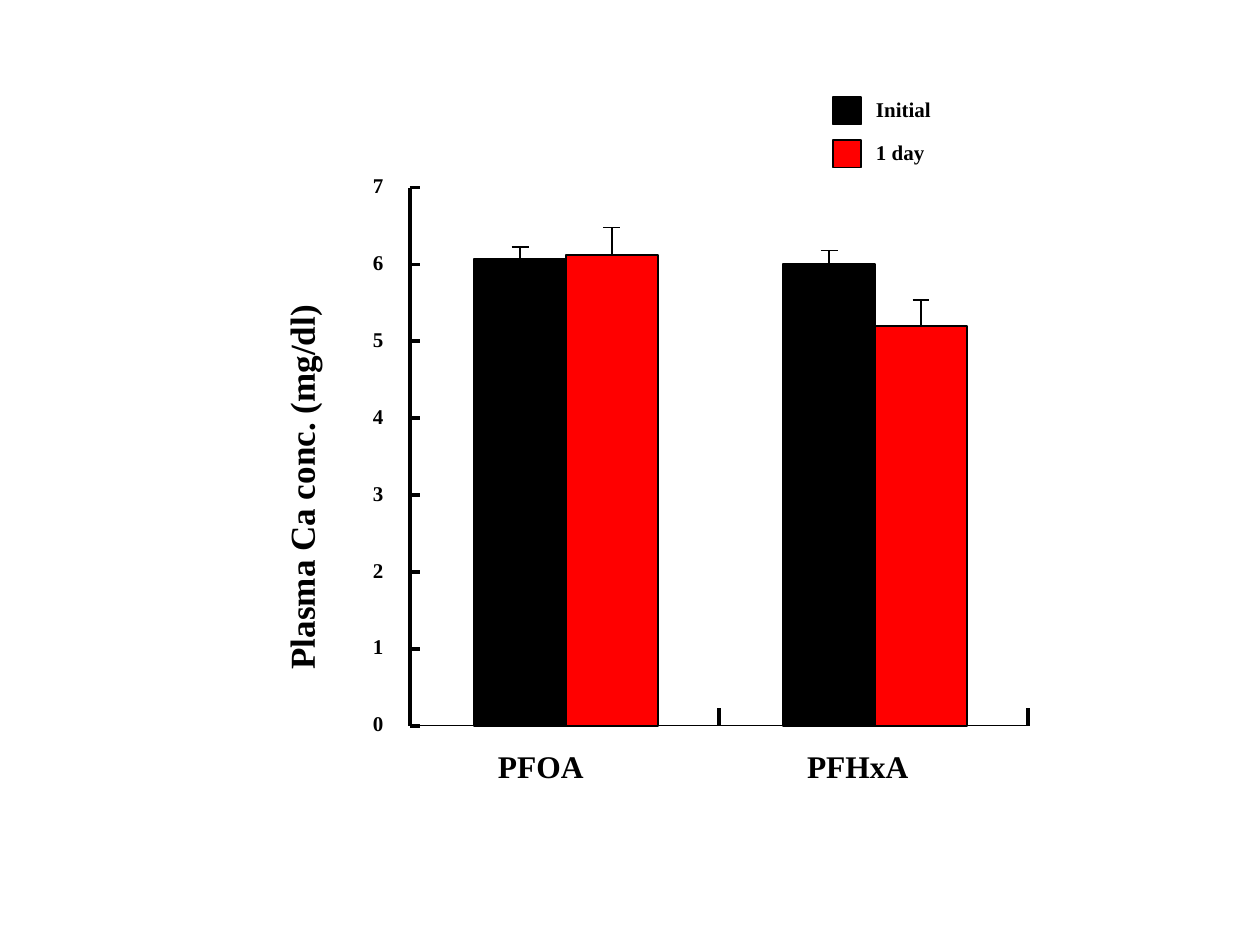
import pptx
import pptx.dml.color
import pptx.enum.shapes
import pptx.enum.text
import pptx.oxml.ns
import pptx.util
from lxml import etree
from pptx.util import Cm, Pt

FONT = "Times New Roman"
BLACK, RED = "000000", "FF0000"
SERIES = [("Initial", BLACK), ("1 day", RED)]
# Per category: (mean, top of the error bar) for each series, in mg/dl
PLASMA_CA = {
    "PFOA": [(6.07, 6.23), (6.12, 6.48)],
    "PFHxA": [(6.0, 6.18), (5.2, 5.54)],
}
Y_MAX = 7
BAR_WIDTH, BAR_OFFSET = 1.85, 1.3
CAP_WIDTH = 0.34


def rgb(value):
    return pptx.dml.color.RGBColor.from_string(value)


def add_box(slide, left, top, width, height, color):
    box = slide.shapes.add_shape(
        pptx.enum.shapes.MSO_SHAPE.RECTANGLE, Cm(left), Cm(top), Cm(width), Cm(height))
    box.shadow.inherit = False
    box.fill.solid()
    box.fill.fore_color.rgb = rgb(color)
    box.line.color.rgb = rgb(BLACK)
    box.line.width = Pt(1)
    return box


def add_line(slide, x1, y1, x2, y2, weight):
    line = slide.shapes.add_connector(
        pptx.enum.shapes.MSO_CONNECTOR.STRAIGHT, Cm(x1), Cm(y1), Cm(x2), Cm(y2))
    line.line.color.rgb = rgb(BLACK)
    line.line.width = Pt(weight)
    etree.SubElement(line._element.spPr, pptx.oxml.ns.qn("a:effectLst"))
    return line


def add_label(slide, text, left, top, width, height, size, inset=True):
    label = slide.shapes.add_textbox(Cm(left), Cm(top), Cm(width), Cm(height))
    frame = label.text_frame
    frame.word_wrap = False
    frame.auto_size = pptx.enum.text.MSO_AUTO_SIZE.SHAPE_TO_FIT_TEXT
    if not inset:
        frame.margin_left = frame.margin_right = 0
        frame.margin_top = frame.margin_bottom = 0
    paragraph = frame.paragraphs[0]
    paragraph.text = text
    paragraph.font.name = FONT
    paragraph.font.size = Pt(size)
    paragraph.font.bold = True
    paragraph.font.color.rgb = rgb(BLACK)
    return label


def add_bars(slide, left, top, width, height):
    """Draw the grouped bars with their error bars."""
    unit = height / Y_MAX
    bottom = top + height
    bars = []
    for group, values in enumerate(PLASMA_CA.values()):
        start = left + group * width / len(PLASMA_CA) + BAR_OFFSET
        for i, ((_, color), (mean, upper)) in enumerate(zip(SERIES, values)):
            x = start + i * BAR_WIDTH
            bar = add_box(slide, x, bottom - mean * unit, BAR_WIDTH, mean * unit, color)
            bars.append((bar, x + BAR_WIDTH / 2, mean, upper))
    for bar, middle, mean, upper in bars:
        cap = bottom - upper * unit
        stem = add_line(slide, middle, bottom - mean * unit, middle, cap, 1)
        stem.begin_connect(bar, 0)
        add_line(slide, middle - CAP_WIDTH / 2, cap, middle + CAP_WIDTH / 2, cap, 1)


def add_axes(slide, left, top, width, height):
    bottom = top + height
    add_line(slide, left, top, left, bottom, 0)
    for value in range(Y_MAX + 1):
        y = bottom - value * height / Y_MAX
        add_line(slide, left, y, left + 0.2, y, 0)
        add_label(slide, str(value), left - 0.74, y - 0.3, 0.28, 0.61, 12, inset=False)
    add_line(slide, left, bottom, left + width, bottom, 0.75)
    step = width / len(PLASMA_CA)
    for group, category in enumerate(PLASMA_CA):
        start = left + group * step
        add_line(slide, start + step, bottom, start + step, bottom - 0.36, 0)
        add_label(slide, category, start + 1.53, bottom + 0.3, 3.2, 1.22, 18)
    title = add_label(slide, "Plasma Ca conc. (mg/dl)",
                      left - 6.81, top + 4.45, 9.58, 1.45, 20)
    title.rotation = 270


def add_legend(slide, left, top, row_height):
    for row, (name, color) in enumerate(SERIES):
        y = top + row * row_height
        add_box(slide, left, y, 0.56, 0.56, color)
        add_label(slide, name, left + 0.86, y, 1.4, 0.61, 12, inset=False)


def main():
    deck = pptx.Presentation()
    deck.slide_width, deck.slide_height = Cm(25.4), Cm(19.05)
    slide = deck.slides.add_slide(deck.slide_layouts[6])
    plot = (8.26, 3.78, 12.46, 10.85)
    add_bars(slide, *plot)
    add_axes(slide, *plot)
    add_legend(slide, 16.8, 1.95, 0.87)
    deck.save("out.pptx")


if __name__ == "__main__":
    main()
